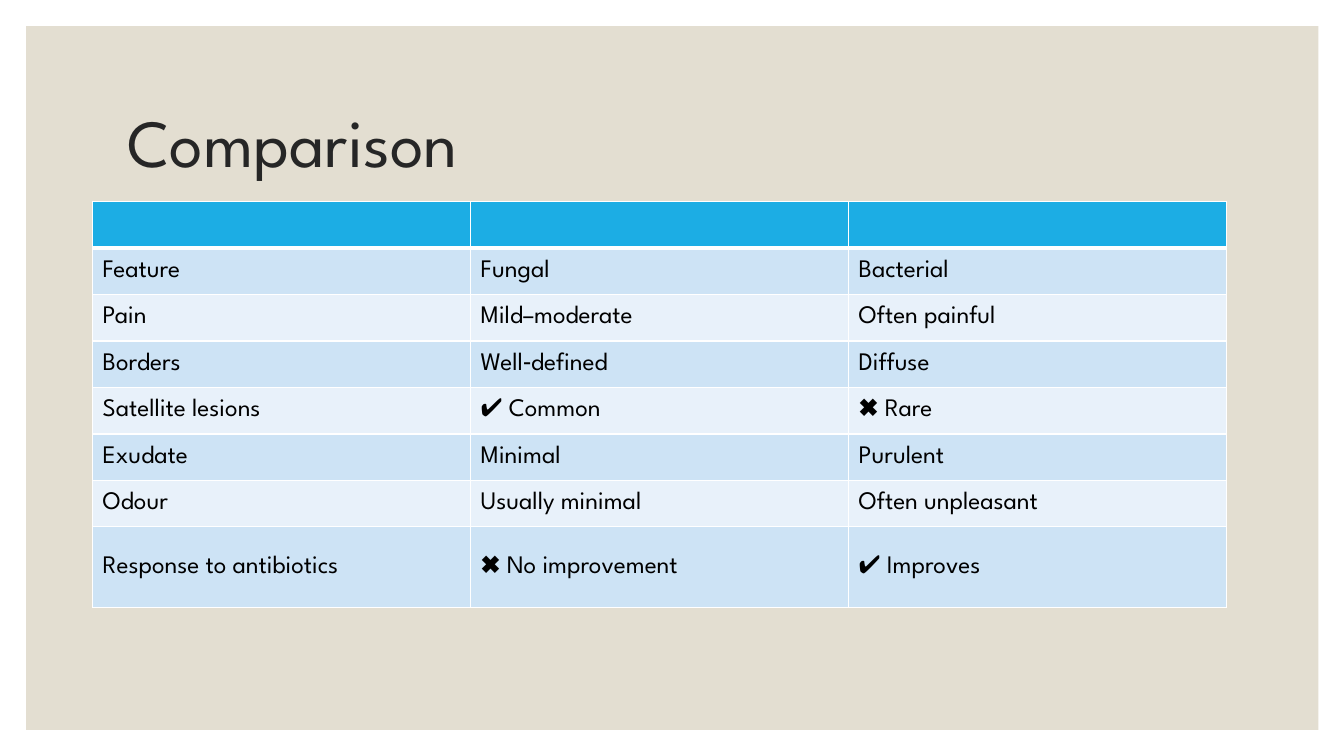
from lxml.etree import SubElement
from pptx import Presentation
from pptx.dml.color import RGBColor
from pptx.enum.shapes import MSO_SHAPE
from pptx.enum.text import MSO_ANCHOR
from pptx.oxml.ns import qn
from pptx.util import Pt


def color(code):
    return RGBColor.from_string(code)


class Deck:
    font = "League Spartan"
    white, sand, dark, black = "FFFFFF", "E3DED1", "262626", "000000"
    head, bands = "1CADE4", ("CDE3F5", "E8F1FA")

    def __init__(self, show):
        self.slide = show.slides.add_slide(show.slide_layouts[6])
        back = self.slide.background.fill
        back.solid()
        back.fore_color.rgb = color(self.white)

    def style(self, frame, size, ink):
        frame.vertical_anchor = MSO_ANCHOR.MIDDLE
        for run in frame.paragraphs[0].runs:
            run.font.name = self.font
            run.font.size = Pt(size)
            run.font.color.rgb = color(ink)

    def panel(self, *box):
        shape = self.slide.shapes.add_shape(MSO_SHAPE.RECTANGLE, *map(Pt, box))
        shape.shadow.inherit = False
        shape.fill.solid()
        shape.fill.fore_color.rgb = color(self.sand)
        shape.line.fill.background()

    def title(self, text, *box):
        frame = self.slide.shapes.add_textbox(*map(Pt, box)).text_frame
        frame.word_wrap = True
        frame.text = text
        frame.paragraphs[0].line_spacing = 0.9
        self.style(frame, 48, self.dark)

    def edge(self, cell, side, width):
        props = cell._tc.get_or_add_tcPr()
        line = SubElement(props, qn("a:ln" + side), w=str(Pt(width)))
        fill = SubElement(line, qn("a:solidFill"))
        SubElement(fill, qn("a:srgbClr"), val=self.white)

    def table(self, rows, highs, *box):
        grid = self.slide.shapes.add_table(len(rows), len(rows[0]), *map(Pt, box)).table
        for r, (row, high) in enumerate(zip(rows, highs)):
            grid.rows[r].height = Pt(high)
            for c, text in enumerate(row):
                cell = grid.cell(r, c)
                # The rule under the header is thicker
                for side in "LRTB":
                    thick = (r, side) in ((0, "B"), (1, "T"))
                    self.edge(cell, side, 3 if thick else 1)
                cell.fill.solid()
                tint = self.bands[(r - 1) % 2] if r else self.head
                cell.fill.fore_color.rgb = color(tint)
                if text:
                    cell.text_frame.text = text
                    self.style(cell.text_frame, 18, self.black)
                cell.vertical_anchor = MSO_ANCHOR.MIDDLE


def main():
    show = Presentation()
    show.slide_width, show.slide_height = Pt(960), Pt(540)
    deck = Deck(show)

    # Backdrop and heading
    deck.panel(18.7, 18.7, 923, 502.6)
    deck.title("Comparison", 84, 50.4, 792, 108)

    # Comparison table
    rows = [
        ("", "", ""),
        ("Feature", "Fungal", "Bacterial"),
        ("Pain", "Mild–moderate", "Often painful"),
        ("Borders", "Well‑defined", "Diffuse"),
        ("Satellite lesions", "✔ Common", "✖ Rare"),
        ("Exudate", "Minimal", "Purulent"),
        ("Odour", "Usually minimal", "Often unpleasant"),
        ("Response to antibiotics", "✖ No improvement", "✔ Improves"),
    ]
    deck.table(rows, [33.2] * 7 + [57.6], 66.2, 144, 810, 290)

    show.save("out.pptx")


if __name__ == "__main__":
    main()
